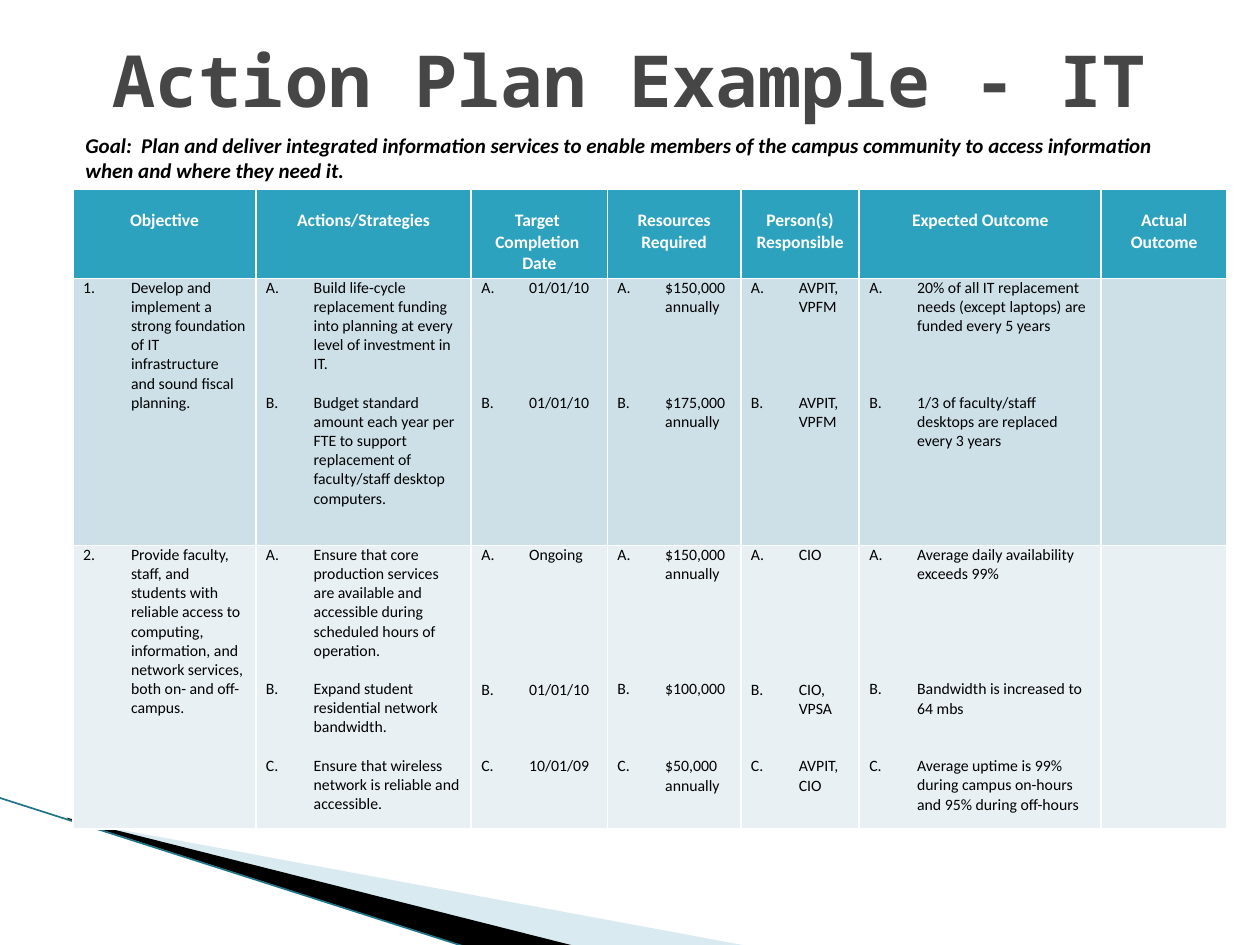
from lxml.etree import SubElement
from pptx import Presentation
from pptx.dml.color import RGBColor
from pptx.enum.shapes import MSO_CONNECTOR
from pptx.enum.text import MSO_ANCHOR, PP_ALIGN
from pptx.oxml.ns import qn
from pptx.util import Inches, Pt

BODY_FONT = "Calibri"
BODY_SIZE = 9
BODY_LINE = 11  # height of one body line, in points

COLUMN_WIDTHS = [1.45, 1.71, 1.08, 1.06, 0.94, 1.92, 1]
ROW_HEIGHTS = [0.71, 2.12, 2.25]
HEADINGS = ["Objective", "Actions/Strategies", "Target \nCompletion \nDate", "Resources Required",
            "Person(s) Responsible", "Expected Outcome", "Actual Outcome"]

# Each cell holds its items as (empty lines above, text).
OBJECTIVES = [
    ("CDE0E8", [
        [(0, "Develop and implement a strong foundation of IT infrastructure and sound fiscal planning.")],
        [(0, "Build life-cycle replacement funding into planning at every level of investment in IT."),
         (1, "Budget standard amount each year per FTE to support replacement of faculty/staff desktop "
             "computers.")],
        [(0, "01/01/10"), (5, "01/01/10")],
        [(0, "$150,000 annually"), (4, "$175,000 annually")],
        [(0, "AVPIT, VPFM"), (4, "AVPIT, VPFM")],
        [(0, "20% of all IT replacement needs (except laptops) are funded every 5 years"),
         (3, "1/3 of faculty/staff desktops are replaced every 3 years")],
        [],
    ]),
    ("E8F0F4", [
        [(0, "Provide faculty, staff, and students with reliable access to computing, information, and "
             "network services, both on- and off-campus.")],
        [(0, "Ensure that core production services are available and accessible during scheduled hours "
             "of operation."),
         (1, "Expand student residential network bandwidth."),
         (1, "Ensure that wireless network is reliable and accessible.")],
        [(0, "Ongoing"), (6, "01/01/10"), (3, "10/01/09")],
        [(0, "$150,000 annually"), (5, "$100,000"), (3, "$50,000 annually")],
        [(0, "CIO"), (6, "CIO, VPSA"), (2, "AVPIT, CIO")],
        [(0, "Average daily availability exceeds 99%"),
         (5, "Bandwidth is increased to 64 mbs"),
         (2, "Average uptime is 99% during campus on-hours and 95% during off-hours")],
        [],
    ]),
]


def rgb(code):
    return RGBColor.from_string(code)


def set_font(paragraph, size, color, name=BODY_FONT, bold=False, italic=False):
    font = paragraph.font
    font.name, font.size, font.bold, font.italic = name, Pt(size), bold, italic
    font.color.rgb = rgb(color)


def number(paragraph, scheme, start):
    """Give the paragraph an automatic number and a hanging indent."""
    properties = paragraph._p.get_or_add_pPr()
    properties.set("marL", str(Inches(0.38)))
    properties.set("indent", str(-Inches(0.38)))
    numbering = SubElement(properties, qn("a:buAutoNum"), type=scheme)
    if start > 1:
        numbering.set("startAt", str(start))


class ActionPlanSlide:
    def __init__(self, presentation):
        self.shapes = presentation.slides.add_slide(presentation.slide_layouts[6]).shapes

    def wedge(self, points, color, opacity=100):
        corners = [(Inches(x), Inches(y)) for x, y in points]
        builder = self.shapes.build_freeform(*corners[0])
        builder.add_line_segments(corners[1:])
        shape = builder.convert_to_shape()
        shape.shadow.inherit = False
        shape.line.fill.background()
        shape.fill.solid()
        shape.fill.fore_color.rgb = rgb(color)
        if opacity < 100:
            tint = shape._element.spPr.find(".//" + qn("a:srgbClr"))
            SubElement(tint, qn("a:alpha"), val=str(opacity * 1000))

    def line(self, x1, y1, x2, y2, color, width):
        connector = self.shapes.add_connector(
            MSO_CONNECTOR.STRAIGHT, Inches(x1), Inches(y1), Inches(x2), Inches(y2))
        connector.line.color.rgb = rgb(color)
        connector.line.width = Pt(width)
        SubElement(connector._element.spPr, qn("a:effectLst"))

    def text(self, left, top, width, height, wording, size, color,
             align=PP_ALIGN.LEFT, anchor=MSO_ANCHOR.TOP, **font):
        frame = self.shapes.add_textbox(
            Inches(left), Inches(top), Inches(width), Inches(height)).text_frame
        frame.word_wrap = True
        frame.vertical_anchor = anchor
        paragraph = frame.paragraphs[0]
        paragraph.text = wording
        paragraph.alignment = align
        set_font(paragraph, size, color, **font)

    def plan_table(self, left, top):
        table = self.shapes.add_table(
            len(ROW_HEIGHTS), len(COLUMN_WIDTHS), Inches(left), Inches(top),
            Inches(sum(COLUMN_WIDTHS)), Inches(sum(ROW_HEIGHTS))).table
        for column, width in zip(table.columns, COLUMN_WIDTHS):
            column.width = Inches(width)
        for row, height in zip(table.rows, ROW_HEIGHTS):
            row.height = Inches(height)
        for column, heading in enumerate(HEADINGS):
            self.heading_cell(table.cell(0, column), heading)
        for row, (color, cells) in enumerate(OBJECTIVES, 1):
            for column, items in enumerate(cells):
                scheme, start = ("alphaUcPeriod", 1) if column else ("arabicPeriod", row)
                self.items_cell(table.cell(row, column), items, color, scheme, start)

    def style_cell(self, cell, color, margin_top=0):
        cell.fill.solid()
        cell.fill.fore_color.rgb = rgb(color)
        cell.margin_left = cell.margin_right = Inches(0.08)
        cell.margin_top, cell.margin_bottom = Inches(margin_top), 0

    def heading_cell(self, cell, heading):
        self.style_cell(cell, "2DA2BF", margin_top=0.17)
        cell.text = heading
        for paragraph in cell.text_frame.paragraphs:
            paragraph.alignment = PP_ALIGN.CENTER
            set_font(paragraph, 10, "FFFFFF", bold=True)

    def items_cell(self, cell, items, color, scheme, start):
        self.style_cell(cell, color)
        cell.text = "\n".join(wording for _, wording in items)
        for paragraph, (empty_lines, _) in zip(cell.text_frame.paragraphs, items):
            number(paragraph, scheme, start)
            if empty_lines:
                paragraph.space_before = Pt(empty_lines * BODY_LINE)
            set_font(paragraph, BODY_SIZE, "000000")


def main():
    presentation = Presentation()
    presentation.slide_width, presentation.slide_height = Inches(10), Inches(7.5)
    slide = ActionPlanSlide(presentation)
    slide.wedge([(0.55, 6.51), (5.95, 7.51), (4.56, 7.51), (0.55, 6.5)], "A0CBDC", opacity=40)
    slide.wedge([(0.53, 6.49), (4.57, 7.51), (3.72, 7.52), (0.54, 6.5)], "000000")
    slide.line(-0.01, 6.33, 3.71, 7.52, "1F7488", 0.95)
    slide.plan_table(0.58, 1.5)
    slide.text(0.5, 0, 9, 1.25, "Action Plan Example - IT", 41, "464646",
               align=PP_ALIGN.CENTER, anchor=MSO_ANCHOR.MIDDLE, name="Noto Sans Mono", bold=True)
    slide.text(0.58, 1, 8.83, 0.81,
               "Goal:  Plan and deliver integrated information services to enable members of the "
               "campus community to access information when and where they need it.",
               12, "000000", bold=True, italic=True)
    presentation.save("out.pptx")


if __name__ == "__main__":
    main()
